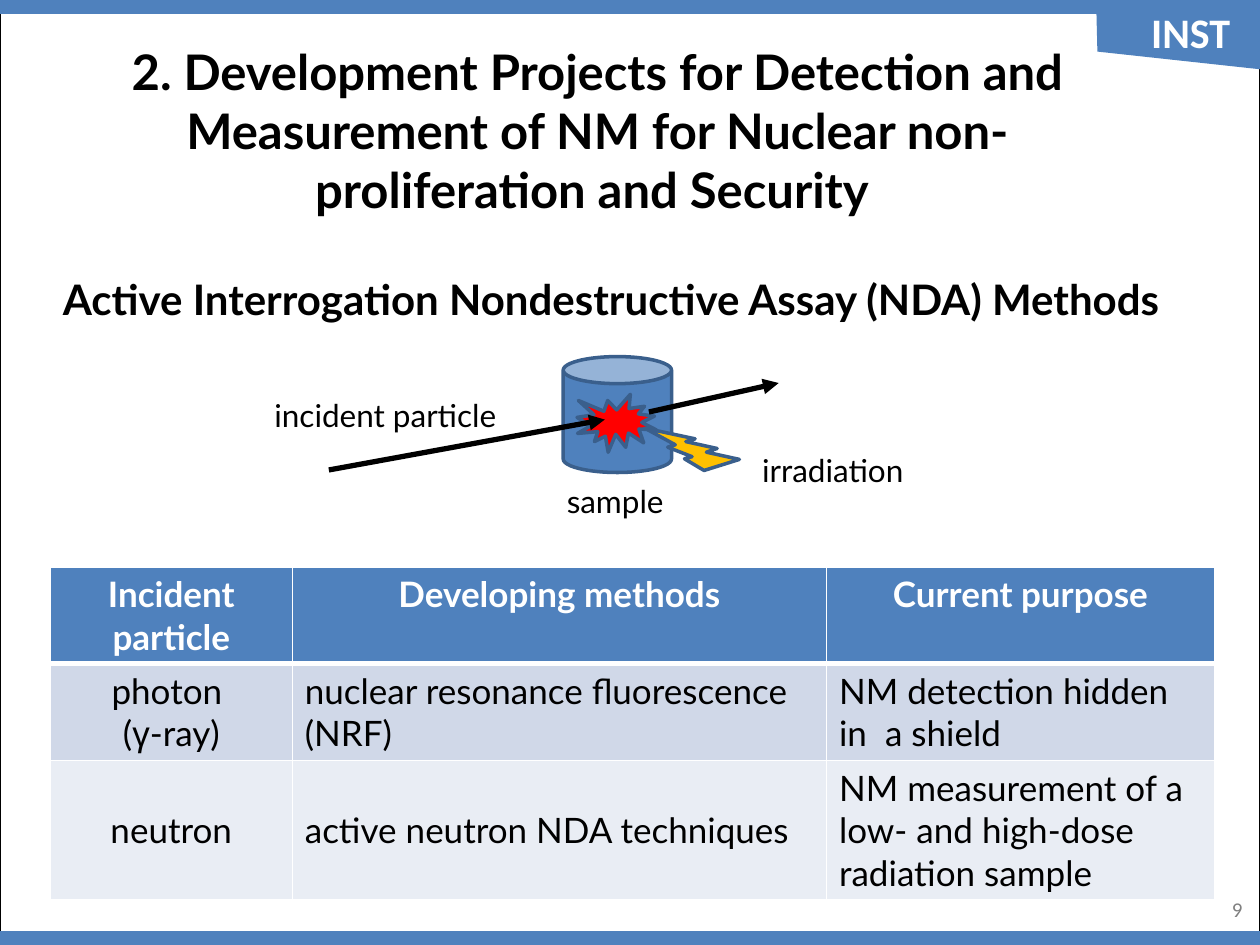
from lxml.etree import SubElement
from pptx import Presentation
from pptx.dml.color import RGBColor
from pptx.enum.shapes import MSO_CONNECTOR, MSO_SHAPE as Shape
from pptx.enum.text import MSO_ANCHOR as Anchor, PP_ALIGN as Align
from pptx.oxml.ns import qn
from pptx.util import Inches, Pt

BLUE, OUTLINE = "4F81BD", "3A5F8C"
BLACK, WHITE = "000000", "FFFFFF"
COLUMNS = (1.92, 4.24, 3.08)
ROWS = (0.76, 0.77, 1.1)
ROW_FILLS = (BLUE, "D0D8E8", "E9EDF4")
CELLS = (
    ("Incident particle", "Developing methods", "Current purpose"),
    ("photon \n(γ-ray)", "nuclear resonance fluorescence (NRF)",
     "NM detection hidden in  a shield"),
    ("neutron", "active neutron NDA techniques",
     "NM measurement of a low- and high-dose radiation sample"),
)


def rgb(color):
    return RGBColor.from_string(color)


def inches(*values):
    return [Inches(v) for v in values]


def write(tf, text, size, color=BLACK, bold=False, align=Align.LEFT, font="Lato"):
    tf.text = text
    for p in tf.paragraphs:
        p.alignment = align
        p.font.name, p.font.size, p.font.bold = font, Pt(size), bold
        p.font.color.rgb = rgb(color)


def add_text(slide, box, text, size, **style):
    tf = slide.shapes.add_textbox(*inches(*box)).text_frame
    tf.word_wrap = False
    write(tf, text, size, **style)


def paint(sp, fill=None, line=None, width=2):
    sp.shadow.inherit = False
    if fill:
        sp.fill.solid()
        sp.fill.fore_color.rgb = rgb(fill)
    else:
        sp.fill.background()
    if line:
        sp.line.color.rgb = rgb(line)
        sp.line.width = Pt(width)
    else:
        sp.line.fill.background()


def add_shape(slide, kind, box, fill=None, line=None, width=2, rotation=0):
    sp = slide.shapes.add_shape(kind, *inches(*box))
    sp.rotation = rotation
    paint(sp, fill, line, width)


def add_flag(slide):
    builder = slide.shapes.build_freeform(*inches(8.7, 0.01))
    corners = ((10, 0.01), (10, 0.55), (8.71, 0.41))
    builder.add_line_segments([inches(*c) for c in corners])
    paint(builder.convert_to_shape(), BLUE)


def add_arrow(slide, start, end):
    line = slide.shapes.add_connector(MSO_CONNECTOR.STRAIGHT, *inches(*start, *end))
    line.line.color.rgb = rgb(BLACK)
    line.line.width = Pt(3)
    SubElement(line.line._get_or_add_ln(), qn("a:tailEnd"), type="triangle")
    SubElement(line._element.spPr, qn("a:effectLst"))


def set_borders(cell, bottom):
    """Draw white cell borders; the element order needs them before the fill."""
    tc_pr = cell._tc.get_or_add_tcPr()
    for side, width in (("L", 1), ("R", 1), ("T", 1), ("B", bottom)):
        ln = SubElement(tc_pr, qn(f"a:ln{side}"), w=str(Pt(width)))
        SubElement(SubElement(ln, qn("a:solidFill")), qn("a:srgbClr"), val=WHITE)


def add_methods_table(slide):
    box = inches(0.4, 4.5, sum(COLUMNS), sum(ROWS))
    table = slide.shapes.add_table(len(ROWS), len(COLUMNS), *box).table
    for column, width in zip(table.columns, COLUMNS):
        column.width = Inches(width)
    for r, (height, fill, texts) in enumerate(zip(ROWS, ROW_FILLS, CELLS)):
        table.rows[r].height = Inches(height)
        header = r == 0
        for c, text in enumerate(texts):
            cell = table.cell(r, c)
            set_borders(cell, 3 if header else 1)
            cell.fill.solid()
            cell.fill.fore_color.rgb = rgb(fill)
            write(cell.text_frame, text, 20, WHITE if header else BLACK, header,
                  Align.CENTER if header or c == 0 else Align.LEFT)
            if r == 2 and c < 2:
                cell.vertical_anchor = Anchor.MIDDLE
    split_gamma(table.cell(1, 0).text_frame.paragraphs[1])


def split_gamma(p):
    p.clear()
    for text, font in (("(", "Lato"), ("γ", "Arial"), ("-ray)", "Lato")):
        r = p.add_run()
        r.text, r.font.name = text, font


def add_frame(slide):
    add_shape(slide, Shape.RECTANGLE, (0, 0, 10, 7.5), line=BLACK, width=0.5)
    for top in (0, 7.39):
        add_shape(slide, Shape.RECTANGLE, (0, top, 10, 0.11), BLUE)
    add_flag(slide)
    add_text(slide, (8.94, 0, 1.02, 0.51), "INST", 24, color=WHITE, bold=True,
             align=Align.CENTER, font="Calibri")
    add_text(slide, (7.63, 7.07, 2.33, 0.4), "9", 12, color="808080",
             align=Align.RIGHT, font="Calibri")


def add_title(slide):
    title = slide.shapes.title
    title.left, title.top, title.width, title.height = inches(0.44, 0.28, 8.6, 1.51)
    tf = title.text_frame
    tf.word_wrap = True
    tf.vertical_anchor = Anchor.TOP
    write(tf, "2. Development Projects for Detection and Measurement of NM for "
          "Nuclear non-proliferation and Security ", 28, bold=True, align=Align.CENTER)


def add_interrogation_diagram(slide):
    add_shape(slide, Shape.CAN, (4.47, 2.83, 0.86, 0.92), BLUE, OUTLINE)
    add_shape(slide, Shape.EXPLOSION1, (4.58, 3.13, 0.63, 0.46), "FF0000", OUTLINE)
    add_arrow(slide, (2.61, 3.73), (4.8, 3.33))
    add_arrow(slide, (5.15, 3.27), (6.18, 3.04))
    add_shape(slide, Shape.LIGHTNING_BOLT, (5.13, 3.37, 0.73, 0.37), "FFC000",
              OUTLINE, rotation=175.7)
    for left, top, width, text in ((2.08, 3.09, 2.16, "incident particle"),
                                   (4.4, 3.78, 1, "sample"),
                                   (5.95, 3.53, 1.39, "irradiation")):
        add_text(slide, (left, top, width, 0.4), text, 18)


def main():
    prs = Presentation()
    prs.slide_width, prs.slide_height = inches(10, 7.5)
    slide = prs.slides.add_slide(prs.slide_layouts[5])
    add_frame(slide)
    add_title(slide)
    add_text(slide, (0.24, 2.12, 9.22, 0.5),
             "Active Interrogation Nondestructive Assay (NDA) Methods", 24,
             bold=True, align=Align.CENTER)
    add_interrogation_diagram(slide)
    add_methods_table(slide)
    prs.save("out.pptx")


if __name__ == "__main__":
    main()
